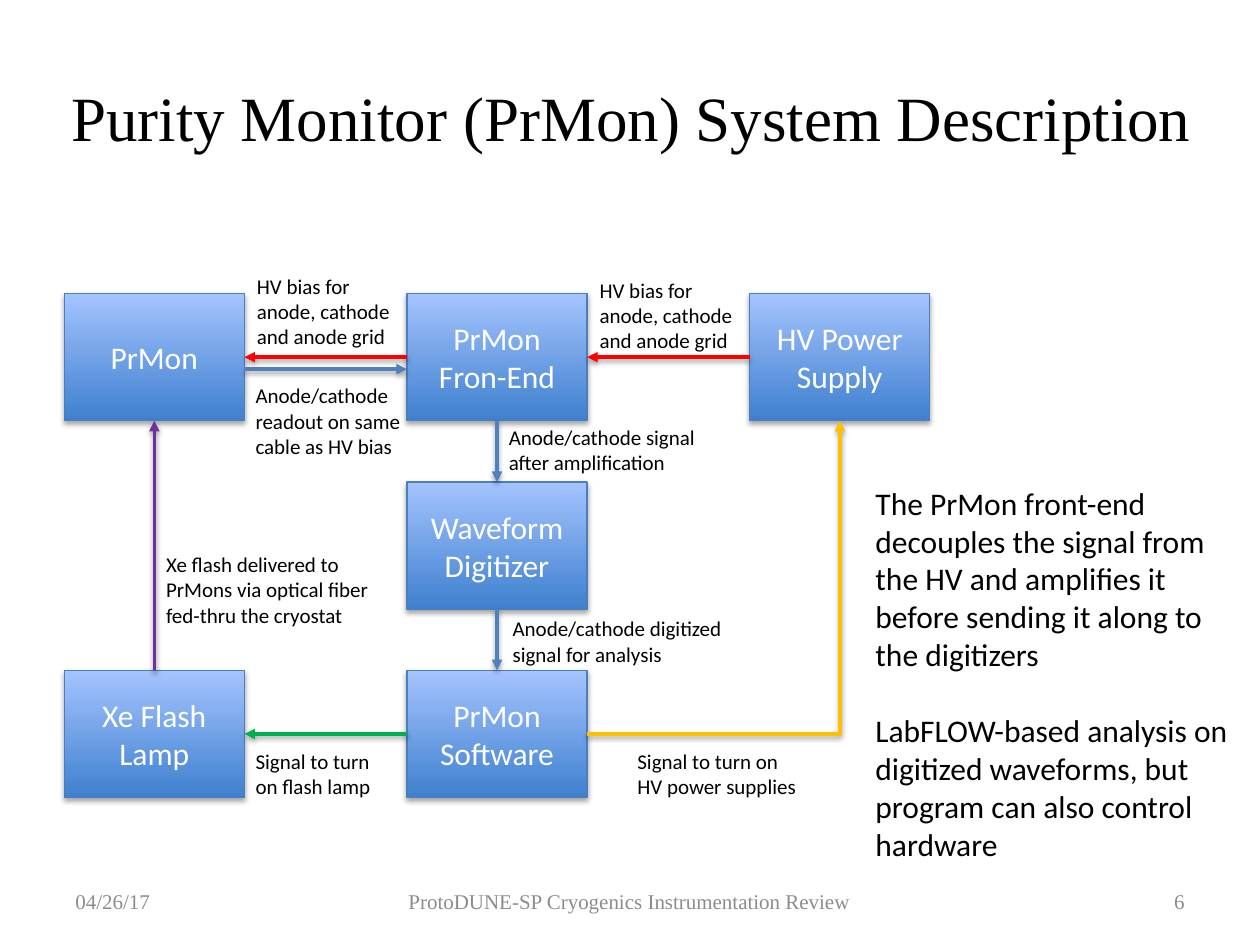
"""Build the purity monitor system description slide."""
import pptx
import pptx.dml.color
import pptx.enum.shapes
import pptx.enum.text
import pptx.oxml
import pptx.oxml.ns
import pptx.util

Inches = pptx.util.Inches
Pt = pptx.util.Pt
Kind = pptx.enum.shapes.MSO_CONNECTOR
Align = pptx.enum.text.PP_ALIGN
Anchor = pptx.enum.text.MSO_ANCHOR
Fit = pptx.enum.text.MSO_AUTO_SIZE

HUES = {
    "black": "000000", "white": "FFFFFF", "gray": "8C8C8C",
    "edge": "4B7EBC", "deep": "3F80CE", "pale": "A4C4FF",
    "blue": "4F81BD", "red": "FF0000", "green": "00B050",
    "purple": "7030A0", "gold": "FFC000",
}
SERIF = "Times New Roman"
TOP, LEFT, BOTTOM, RIGHT = range(4)
WIDE, HIGH = 1.43, 1.01
COLS = [0.51 + 2.72 * i for i in range(3)]
ROWS = [2.33 + 1.495 * i for i in range(3)]


def hue(name):
    return pptx.dml.color.RGBColor.from_string(HUES[name])


def apply(target, values):
    for key, value in values.items():
        setattr(target, key, value)


def shade(props, alpha, dist):
    tag = pptx.oxml.ns.qn("a:effectLst")
    for old in props.findall(tag):
        props.remove(old)
    props.append(pptx.oxml.parse_xml(
        f'<a:effectLst {pptx.oxml.ns.nsdecls("a")}>'
        f'<a:outerShdw blurRad="{Pt(3.1)}" dist="{Pt(dist)}" dir="5400000" rotWithShape="0">'
        f'<a:srgbClr val="{HUES["black"]}"><a:alpha val="{alpha * 1000}"/></a:srgbClr>'
        '</a:outerShdw></a:effectLst>'))


class Deck:
    def __init__(self):
        self.show = pptx.Presentation()
        apply(self.show, {"slide_width": Inches(10), "slide_height": Inches(7.5)})
        self.slide = self.show.slides.add_slide(self.show.slide_layouts[6])
        self.shapes = self.slide.shapes

    def words(self, frame, texts, size, color, face, align, gap=0):
        frame.word_wrap = True
        for i, text in enumerate(texts):
            para = frame.paragraphs[0] if i == 0 else frame.add_paragraph()
            para.alignment = align
            if i:
                para.space_before = Pt(gap)
            run = para.add_run()
            run.text = text
            apply(run.font, {"size": Pt(size), "name": face})
            run.font.color.rgb = hue(color)

    def text(self, place, *texts, size=12, color="black", face="Calibri",
             align=Align.LEFT, anchor=Anchor.TOP, fit=Fit.SHAPE_TO_FIT_TEXT, gap=0):
        frame = self.shapes.add_textbox(*map(Inches, place)).text_frame
        self.words(frame, texts, size, color, face, align, gap)
        apply(frame, {"vertical_anchor": anchor, "auto_size": fit})

    def block(self, col, row, text):
        place = map(Inches, (COLS[col], ROWS[row], WIDE, HIGH))
        box = self.shapes.add_shape(pptx.enum.shapes.MSO_SHAPE.RECTANGLE, *place)
        box.fill.gradient()
        box.fill.gradient_angle = 90
        for stop, name in zip(box.fill.gradient_stops, ("deep", "pale")):
            stop.color.rgb = hue(name)
        box.line.color.rgb = hue("edge")
        box.line.width = Pt(0.75)
        box.shadow.inherit = False
        shade(box._element.spPr, 35, 1.8)
        box.text_frame.vertical_anchor = Anchor.MIDDLE
        self.words(box.text_frame, [text], 18, "white", "Calibri", Align.CENTER)
        return box

    def arrow(self, color, ends=(0, 0, 0, 0), start=None, stop=None, kind=Kind.STRAIGHT):
        link = self.shapes.add_connector(kind, *map(Inches, ends))
        if start:
            link.begin_connect(*start)
        if stop:
            link.end_connect(*stop)
        link.line.color.rgb = hue(color)
        link.line.width = Pt(2)
        link.line._get_or_add_ln().append(pptx.oxml.parse_xml(
            f'<a:tailEnd {pptx.oxml.ns.nsdecls("a")} type="triangle"/>'))
        props = link._element.spPr
        if kind == Kind.ELBOW:
            props.find(pptx.oxml.ns.qn("a:prstGeom")).set("prst", "bentConnector2")
        shade(props, 38, 1.6)


def main():
    deck = Deck()
    fixed = {"face": SERIF, "anchor": Anchor.MIDDLE, "fit": Fit.NONE}
    deck.text((0.4, 0.3, 9.22, 1.25), "Purity Monitor (PrMon) System Description",
              size=36, align=Align.CENTER, **fixed)

    prmon = deck.block(0, 0, "PrMon")
    front = deck.block(1, 0, "PrMon Fron-End")
    supply = deck.block(2, 0, "HV Power Supply")
    lamp = deck.block(0, 2, "Xe Flash Lamp")
    soft = deck.block(1, 2, "PrMon Software")
    wave = deck.block(1, 1, "Waveform Digitizer")

    deck.arrow("blue", (COLS[0] + WIDE, 2.93, COLS[1], 2.93))
    for color, start, out, stop, into in (
        ("blue", front, BOTTOM, wave, TOP),
        ("blue", wave, BOTTOM, soft, TOP),
        ("red", supply, LEFT, front, RIGHT),
        ("red", front, LEFT, prmon, RIGHT),
        ("green", soft, LEFT, lamp, RIGHT),
        ("purple", lamp, TOP, prmon, BOTTOM),
    ):
        deck.arrow(color, start=(start, out), stop=(stop, into))
    deck.arrow("gold", start=(soft, RIGHT), stop=(supply, BOTTOM), kind=Kind.ELBOW)

    bias = "HV bias for anode, cathode and anode grid"
    for place, text in (
        ((4.66, 2.15, 1.28, 0.71), bias),
        ((1.94, 2.12, 1.28, 0.71), bias),
        ((1.93, 2.99, 1.44, 0.71), "Anode/cathode readout on same cable as HV bias"),
        ((3.94, 3.32, 1.73, 0.5), "Anode/cathode signal after amplification"),
        ((3.97, 4.84, 1.97, 0.5), "Anode/cathode digitized signal for analysis"),
        ((1.93, 5.89, 1.28, 0.5), "Signal to turn on flash lamp"),
        ((1.22, 4.33, 1.84, 0.71),
         "Xe flash delivered to PrMons via optical fiber fed-thru the cryostat"),
        ((4.96, 5.89, 1.55, 0.5), "Signal to turn on HV power supplies"),
    ):
        deck.text(place, text)

    deck.text((6.85, 3.79, 3.06, 3.13),
              "The PrMon front-end decouples the signal from the HV and amplifies it "
              "before sending it along to the digitizers",
              "LabFLOW-based analysis on digitized waveforms, but program can also "
              "control hardware", size=18, gap=22)

    for left, width, text, align in (
        (0.5, 2.33, "04/26/17", Align.LEFT),
        (3.12, 3.75, "ProtoDUNE-SP Cryogenics Instrumentation Review", Align.CENTER),
        (7.17, 2.33, "6", Align.RIGHT),
    ):
        deck.text((left, 6.95, width, 0.4), text, color="gray", align=align, **fixed)
    deck.show.save("out.pptx")


if __name__ == "__main__":
    main()
